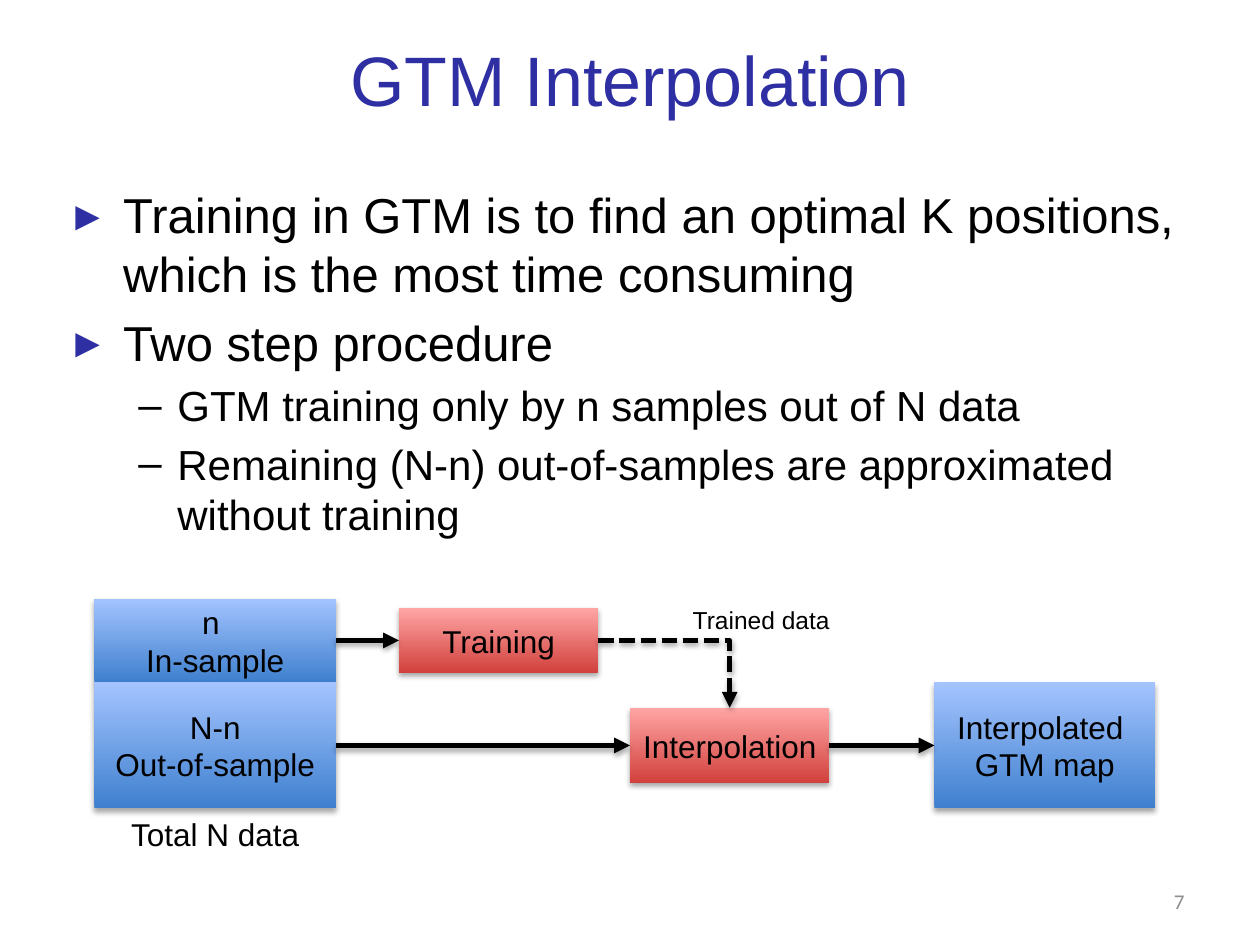
from lxml.etree import SubElement
from pptx import Presentation
from pptx.dml.color import RGBColor
from pptx.enum.dml import MSO_LINE
from pptx.enum.shapes import MSO_CONNECTOR, MSO_SHAPE
from pptx.enum.text import MSO_ANCHOR, PP_ALIGN
from pptx.oxml.ns import qn
from pptx.util import Inches, Pt

HEX = {"title": "2F2FA4", "text": "000000", "page": "8C8C8C"}
BLUE = ("3F80CE", "A4C4FF")
RED = ("D1403C", "FFA6A5")

# Grid of 120 columns and 90 rows
WIDE, HIGH = Inches(10), Inches(7.5)
COL, ROW = WIDE / 120, HIGH / 90


def span(x, y, w, h):
    return [round(n) for n in (x * COL, y * ROW, w * COL, h * ROW)]


def style(par, size, color="text", face="Arial"):
    font = par.font
    font.size, font.name = Pt(size), face
    font.color.rgb = RGBColor.from_string(HEX[color])


def write(shape, text, size, align=PP_ALIGN.CENTER,
          anchor=MSO_ANCHOR.MIDDLE, **look):
    frame = shape.text_frame
    frame.word_wrap, frame.vertical_anchor = True, anchor
    frame.text = text
    for par in frame.paragraphs:
        par.alignment = align
        style(par, size, **look)


def label(slide, box, text, size, **look):
    write(slide.shapes.add_textbox(*span(*box)), text, size, **look)


def shade(shape):
    """Soft shadow straight below a shape or line."""
    effects = SubElement(shape._element.spPr, qn("a:effectLst"))
    outer = SubElement(effects, qn("a:outerShdw"), blurRad="40000",
                       dist="23000", dir="5400000", rotWithShape="0")
    color = SubElement(outer, qn("a:srgbClr"), val=HEX["text"])
    SubElement(color, qn("a:alpha"), val="35000")


def block(slide, box, text, tones):
    shape = slide.shapes.add_shape(MSO_SHAPE.RECTANGLE, *span(*box))
    shape.fill.gradient()
    shape.fill.gradient_angle = 90
    for stop, tone in zip(shape.fill.gradient_stops, tones):
        stop.color.rgb = RGBColor.from_string(tone)
    shape.line.fill.background()
    shade(shape)
    write(shape, text, 18)
    return shape


def arrow(slide, start, end, side=1, bent=False):
    kind = MSO_CONNECTOR.ELBOW if bent else MSO_CONNECTOR.STRAIGHT
    link = slide.shapes.add_connector(kind, 0, 0, 0, 0)
    link.begin_connect(start, 3)
    link.end_connect(end, side)
    link.line.width = Pt(3)
    link.line.color.rgb = RGBColor.from_string(HEX["text"])
    if bent:
        link.line.dash_style = MSO_LINE.SQUARE_DOT
        link._element.spPr.find(qn("a:prstGeom")).set("prst", "bentConnector2")
    SubElement(link.line._get_or_add_ln(), qn("a:tailEnd"), type="triangle")
    shade(link)


def bullet(par, level):
    size, left, hang, mark = ((28, 0.38, 0.38, "▸"),
                              (24, 0.81, 0.31, "–"))[level]
    par.level, par.space_before = level, Pt(size * 0.2)
    props = par._p.get_or_add_pPr()
    props.set("marL", str(Inches(left)))
    props.set("indent", str(-Inches(hang)))
    if level == 0:
        color = SubElement(props, qn("a:buClr"))
        SubElement(color, qn("a:srgbClr"), val=HEX["title"])
    SubElement(props, qn("a:buFont"), typeface="Arial")
    SubElement(props, qn("a:buChar"), char=mark)
    style(par, size)


def body(slide, box):
    points = (
        (0, "Training in GTM is to find an optimal K positions, "
            "which is the most time consuming"),
        (0, "Two step procedure"),
        (1, "GTM training only by n samples out of N data"),
        (1, "Remaining (N-n) out-of-samples are approximated "
            "without training"),
    )
    frame = slide.shapes.add_textbox(*span(*box)).text_frame
    frame.word_wrap = True
    frame.text = "\n".join(text for _, text in points)
    for par, (level, _) in zip(frame.paragraphs, points):
        bullet(par, level)


def flow(slide, box):
    x, y, w, h = box
    top, low = y + 4, y + 14  # centre rows of the two lanes

    # Data and steps
    inner = block(slide, (x, y, 23, 8), "n \vIn-sample", BLUE)
    outer = block(slide, (x, y + 8, 23, 12), "N-n\nOut-of-sample", BLUE)
    label(slide, (x, y + 20, 23, 4.8), "Total N data", 18,
          anchor=MSO_ANCHOR.TOP)
    train = block(slide, (x + 29, top - 3.1, 19, 6.2), "Training", RED)
    inter = block(slide, (x + 51, low - 3.6, 19, 7.2), "Interpolation", RED)

    # Arrows and result
    arrow(slide, inner, train)
    arrow(slide, train, inter, side=0, bent=True)
    arrow(slide, outer, inter)
    label(slide, (x + 53, y, 21, 4), "Trained data", 14,
          anchor=MSO_ANCHOR.TOP)
    result = block(slide, (x + w - 21, y + 8, 21, 12),
                   "Interpolated \nGTM map", BLUE)
    arrow(slide, inter, result)


def main():
    deck = Presentation()
    deck.slide_width, deck.slide_height = WIDE, HIGH
    slide = deck.slides.add_slide(deck.slide_layouts[6])
    label(slide, (6, 0, 108, 15), "GTM Interpolation", 40, color="title")
    body(slide, (6, 17, 108, 71.2))
    flow(slide, (9, 57, 101, 25))
    label(slide, (86, 83.4, 28, 4.8), "7", 12, align=PP_ALIGN.RIGHT,
          color="page", face="Calibri")
    deck.save("out.pptx")


if __name__ == "__main__":
    main()
